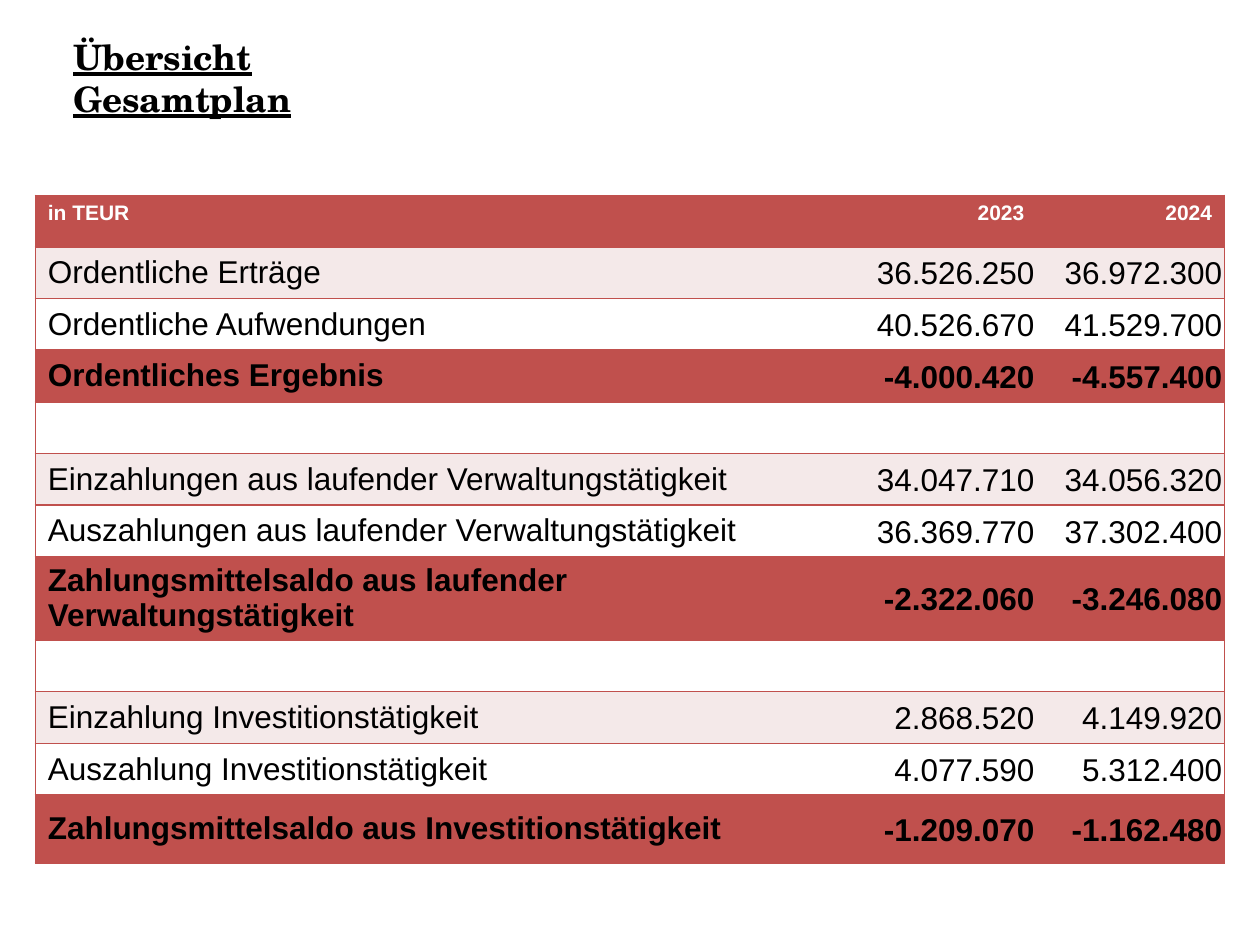
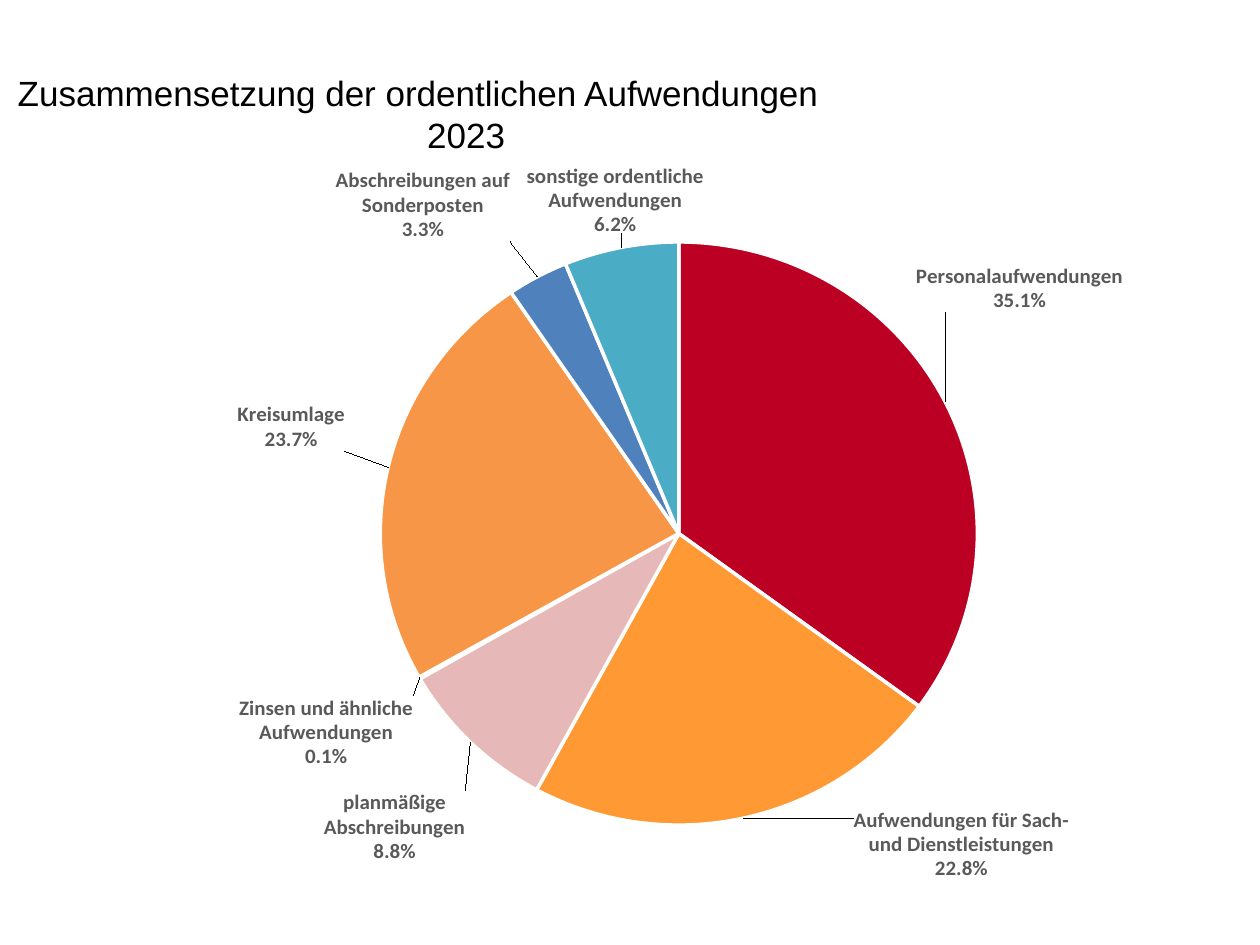
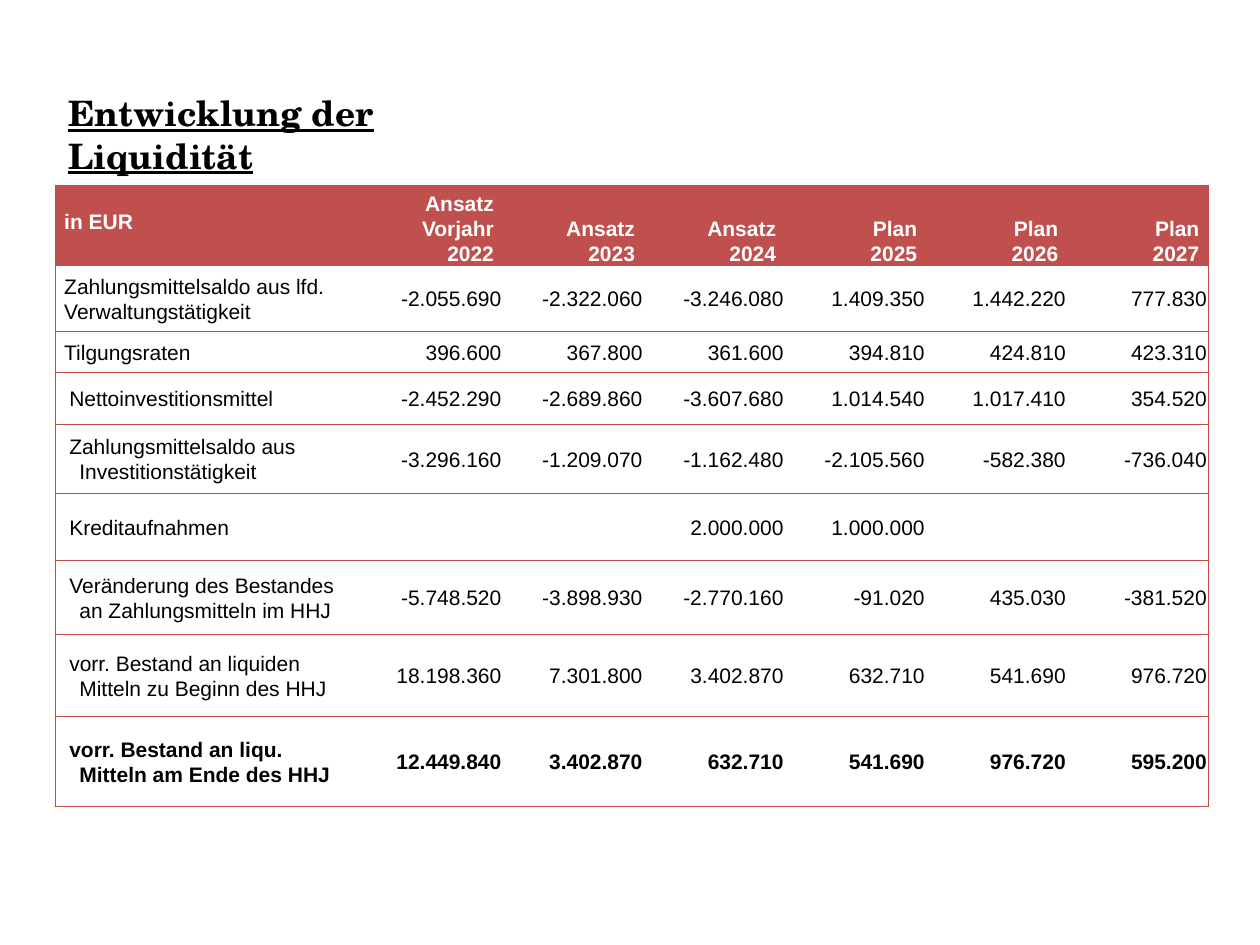
"""Build three budget slides: overall plan, expense breakdown and liquidity."""
from copy import deepcopy

from pptx import Presentation
from pptx.chart.data import CategoryChartData
from pptx.dml.color import RGBColor
from pptx.enum.chart import XL_CHART_TYPE, XL_LABEL_POSITION
from pptx.enum.text import MSO_ANCHOR, MSO_AUTO_SIZE, PP_ALIGN
from pptx.oxml import parse_xml
from pptx.oxml.ns import nsdecls, qn
from pptx.util import Inches, Pt

BLACK = RGBColor(0x00, 0x00, 0x00)
WHITE = RGBColor(0xFF, 0xFF, 0xFF)
GREY = RGBColor(0x59, 0x59, 0x59)
RED = RGBColor(0xC0, 0x50, 0x4D)
LINE_RED = RGBColor(0xBF, 0x4C, 0x48)
PALE_RED = RGBColor(0xF4, 0xE9, 0xE9)
CRIMSON = RGBColor(0xBC, 0x00, 0x24)
AMBER = RGBColor(0xFF, 0x99, 0x33)
ROSE = RGBColor(0xE6, 0xB9, 0xB8)
PURPLE = RGBColor(0x80, 0x64, 0xA2)
ORANGE = RGBColor(0xF7, 0x96, 0x46)
BLUE = RGBColor(0x4F, 0x81, 0xBD)
TEAL = RGBColor(0x4B, 0xAC, 0xC6)
SERIF, SANS, LABEL_FONT = "TeX Gyre Schola", "Arial", "Calibri"


def write(paragraph, text, size, color=BLACK, bold=False, name=SANS, underline=None):
    for number, line in enumerate(text.split("\n")):
        if number:
            paragraph.add_line_break()
        run = paragraph.add_run()
        run.text = line
        run.font.name, run.font.size = name, Pt(size)
        run.font.bold, run.font.underline = bold, underline
        run.font.color.rgb = color


def frame_cell(cell, margins, is_first, is_last, color, width):
    cell.margin_left, cell.margin_top, cell.margin_right, cell.margin_bottom = map(Inches, margins)
    sides = {"lnL": is_first, "lnR": is_last, "lnT": True, "lnB": True}
    for position, (side, visible) in enumerate(sides.items()):
        paint = f'<a:solidFill><a:srgbClr val="{color}"/></a:solidFill>' if visible else "<a:noFill/>"
        border = parse_xml(f'<a:{side} {nsdecls("a")} w="{Pt(width)}">{paint}</a:{side}>')
        cell._tc.get_or_add_tcPr().insert(position, border)


prs = Presentation()
prs.slide_width, prs.slide_height = Inches(10), Inches(7.5)

titles = [
    (["Übersicht Gesamtplan"], 0.48, 0.23, 3.11, SERIF, True),
    (["Zusammensetzung der ordentlichen Aufwendungen", "2023"], 0.04, 0.52, 7.32, SANS, False),
    (["Entwicklung der Liquidität"], 0.44, 0.68, 3.7, SERIF, True),
]
slides = []
for lines, left, top, width, font_name, emphasis in titles:
    slide = prs.slides.add_slide(prs.slide_layouts[5])
    title = slide.shapes.title
    title.left, title.top, title.width, title.height = map(Inches, (left, top, width, 0.77))
    frame = title.text_frame
    frame.word_wrap = True
    frame.auto_size = MSO_AUTO_SIZE.NONE
    frame.vertical_anchor = MSO_ANCHOR.TOP
    for number, line in enumerate(lines):
        paragraph = frame.add_paragraph() if number else frame.paragraphs[0]
        paragraph.alignment = PP_ALIGN.CENTER if number else PP_ALIGN.LEFT
        write(paragraph, line, 20, bold=emphasis, name=font_name, underline=emphasis)
    slides.append(slide)
plan_slide, expense_slide, liquidity_slide = slides

plan_rows = [
    ("in TEUR", "2023", "2024"),
    ("Ordentliche Erträge", "36.526.250", "36.972.300"),
    ("Ordentliche Aufwendungen", "40.526.670", "41.529.700"),
    ("Ordentliches Ergebnis", "-4.000.420", "-4.557.400"),
    ("", "", ""),
    ("Einzahlungen aus laufender Verwaltungstätigkeit", "34.047.710", "34.056.320"),
    ("Auszahlungen aus laufender Verwaltungstätigkeit", "36.369.770", "37.302.400"),
    ("Zahlungsmittelsaldo aus laufender Verwaltungstätigkeit", "-2.322.060", "-3.246.080"),
    ("", "", ""),
    ("Einzahlung Investitionstätigkeit", "2.868.520", "4.149.920"),
    ("Auszahlung Investitionstätigkeit", "4.077.590", "5.312.400"),
    ("Zahlungsmittelsaldo aus Investitionstätigkeit", "-1.209.070", "-1.162.480"),
]
plan_heights = [0.41] * 7 + [0.66] + [0.41] * 3 + [0.54]
block_fills = [WHITE, PALE_RED, WHITE, RED]
plan = plan_slide.shapes.add_table(
    len(plan_rows), 3, Inches(0.28), Inches(1.55), Inches(9.44), Inches(sum(plan_heights))).table
plan.first_row = plan.horz_banding = False
for column, width in zip(plan.columns, (6.3, 1.65, 1.49)):
    column.width = Inches(width)
for r, values in enumerate(plan_rows):
    plan.rows[r].height = Inches(plan_heights[r])
    is_header, is_total = r == 0, r % 4 == 3
    for c, value in enumerate(values):
        cell = plan.cell(r, c)
        cell.fill.solid()
        cell.fill.fore_color.rgb = RED if is_header else block_fills[r % 4]
        margins = (0.1, 0.05, 0.1, 0.05) if is_header or c == 0 else (0, 0, 0.02, 0)
        frame_cell(cell, margins, c == 0, c == 2, RED, 1)
        cell.vertical_anchor = MSO_ANCHOR.TOP if is_header else MSO_ANCHOR.MIDDLE
        paragraph = cell.text_frame.paragraphs[0]
        if c:
            paragraph.alignment = PP_ALIGN.RIGHT
            paragraph.line_spacing = 1 if is_header else 1.07
        if value:
            write(paragraph, value, 12 if is_header else 18,
                  WHITE if is_header else BLACK, is_header or is_total)

expenses = [
    ("Personalaufwendungen", 35.1, CRIMSON, -0.03, -0.12),
    ("Aufwendungen für Sach-\nund Dienstleistungen", 22.8, AMBER, 0.09, -0.01),
    ("planmäßige\nAbschreibungen", 8.8, ROSE, 0, 0.06),
    ("Zinsen und ähnliche\nAufwendungen", 0.1, PURPLE, 0, 0.02),
    ("Kreisumlage", 23.7, ORANGE, -0.03, -0.02),
    ("Abschreibungen auf Sonderposten", 3.3, BLUE, -0.02, -0.04),
    ("sonstige ordentliche\nAufwendungen", 6.2, TEAL, 0.07, -0.01),
]
chart_data = CategoryChartData()
chart_data.categories = [expense[0] for expense in expenses]
chart_data.add_series("Series 1", [expense[1] for expense in expenses])
pie = expense_slide.shapes.add_chart(
    XL_CHART_TYPE.PIE, Inches(0.28), Inches(1.3), Inches(9.53), Inches(5.83), chart_data).chart
pie.has_title = pie.has_legend = False
pie.font.name, pie.font.size, pie.font.color.rgb = LABEL_FONT, Pt(10), BLACK
pie.plots[0].vary_by_categories = True

plot_area = pie._chartSpace.chart.plotArea
for layout in plot_area.findall(qn("c:layout")):
    plot_area.remove(layout)
plot_area.insert(0, parse_xml(
    f'<c:layout {nsdecls("c")}><c:manualLayout><c:layoutTarget val="inner"/>'
    '<c:xMode val="edge"/><c:yMode val="edge"/><c:x val="0.107"/><c:y val="0.109"/>'
    '<c:w val="0.858"/><c:h val="0.813"/></c:manualLayout></c:layout>'))

expense_series = pie.plots[0].series[0]
labels = expense_series.data_labels
labels.show_value = False
labels.show_category_name = labels.show_percentage = True
labels.number_format, labels.number_format_is_linked = "0.0%", False
labels.position = XL_LABEL_POSITION.OUTSIDE_END
labels.font.name, labels.font.size, labels.font.bold = LABEL_FONT, Pt(12), True
labels.font.color.rgb = GREY
label_list = labels._element
label_list.find(qn("c:showBubbleSize")).addnext(
    parse_xml(f'<c:separator {nsdecls("c")}>\n</c:separator>'))
shared_settings = [item for item in label_list if item.tag != qn("c:showLeaderLines")]
for number, (_, _, color, shift_x, shift_y) in enumerate(expenses):
    slice_format = expense_series.points[number].format
    slice_format.fill.solid()
    slice_format.fill.fore_color.rgb = color
    slice_format.line.color.rgb = WHITE
    slice_format.line.width = Pt(2)
    label = parse_xml(
        f'<c:dLbl {nsdecls("c")}><c:idx val="{number}"/><c:layout><c:manualLayout>'
        f'<c:x val="{shift_x}"/><c:y val="{shift_y}"/></c:manualLayout></c:layout></c:dLbl>')
    label.extend(deepcopy(shared_settings))
    label_list.insert(number, label)

liquidity_rows = [
    ("in EUR", "Ansatz\nVorjahr\n2022", "Ansatz\n2023", "Ansatz\n2024",
     "Plan\n2025", "Plan\n2026", "Plan\n2027"),
    ("Zahlungsmittelsaldo aus lfd. Verwaltungstätigkeit",
     "-2.055.690", "-2.322.060", "-3.246.080", "1.409.350", "1.442.220", "777.830"),
    ("Tilgungsraten", "396.600", "367.800", "361.600", "394.810", "424.810", "423.310"),
    ("Nettoinvestitionsmittel",
     "-2.452.290", "-2.689.860", "-3.607.680", "1.014.540", "1.017.410", "354.520"),
    ("Zahlungsmittelsaldo aus Investitionstätigkeit",
     "-3.296.160", "-1.209.070", "-1.162.480", "-2.105.560", "-582.380", "-736.040"),
    ("Kreditaufnahmen", "", "", "2.000.000", "1.000.000", "", ""),
    ("Veränderung des Bestandes an Zahlungsmitteln im HHJ",
     "-5.748.520", "-3.898.930", "-2.770.160", "-91.020", "435.030", "-381.520"),
    ("vorr. Bestand an liquiden Mitteln zu Beginn des HHJ",
     "18.198.360", "7.301.800", "3.402.870", "632.710", "541.690", "976.720"),
    ("vorr. Bestand an liqu. Mitteln am Ende des HHJ",
     "12.449.840", "3.402.870", "632.710", "541.690", "976.720", "595.200"),
]
liquidity_heights = [0.64, 0.52, 0.33, 0.41, 0.55, 0.53, 0.59, 0.65, 0.71]
liquidity = liquidity_slide.shapes.add_table(
    len(liquidity_rows), 7, Inches(0.44), Inches(1.47), Inches(9.13),
    Inches(sum(liquidity_heights))).table
liquidity.first_row = liquidity.horz_banding = False
for c, column in enumerate(liquidity.columns):
    column.width = Inches(1.12 if c else 2.43)
for r, values in enumerate(liquidity_rows):
    liquidity.rows[r].height = Inches(liquidity_heights[r])
    is_header, is_closing = r == 0, r == len(liquidity_rows) - 1
    for c, value in enumerate(values):
        cell = liquidity.cell(r, c)
        cell.fill.solid()
        cell.fill.fore_color.rgb = RED if is_header else WHITE
        margins = (0.07, 0, 0.07, 0) if is_header or c == 0 else (0.01, 0.01, 0.01, 0)
        if is_header and c == 0:
            margins = (0.07, 0, 0.07, 0.06)
        frame_cell(cell, margins, c == 0, c == 6, LINE_RED, 0.75)
        cell.vertical_anchor = MSO_ANCHOR.BOTTOM if is_header and c else MSO_ANCHOR.MIDDLE
        paragraph = cell.text_frame.paragraphs[0]
        paragraph.alignment = PP_ALIGN.RIGHT if c else PP_ALIGN.LEFT
        paragraph.line_spacing = 1.07 if is_header or c == 0 else 1
        if c == 0 and r > 2:
            indents = paragraph._p.get_or_add_pPr()
            indents.set("marL", str(Inches(0.12)))
            indents.set("indent", str(Inches(-0.08)))
        if value:
            write(paragraph, value, 12, WHITE if is_header else BLACK, is_header or is_closing)

prs.save("out.pptx")
